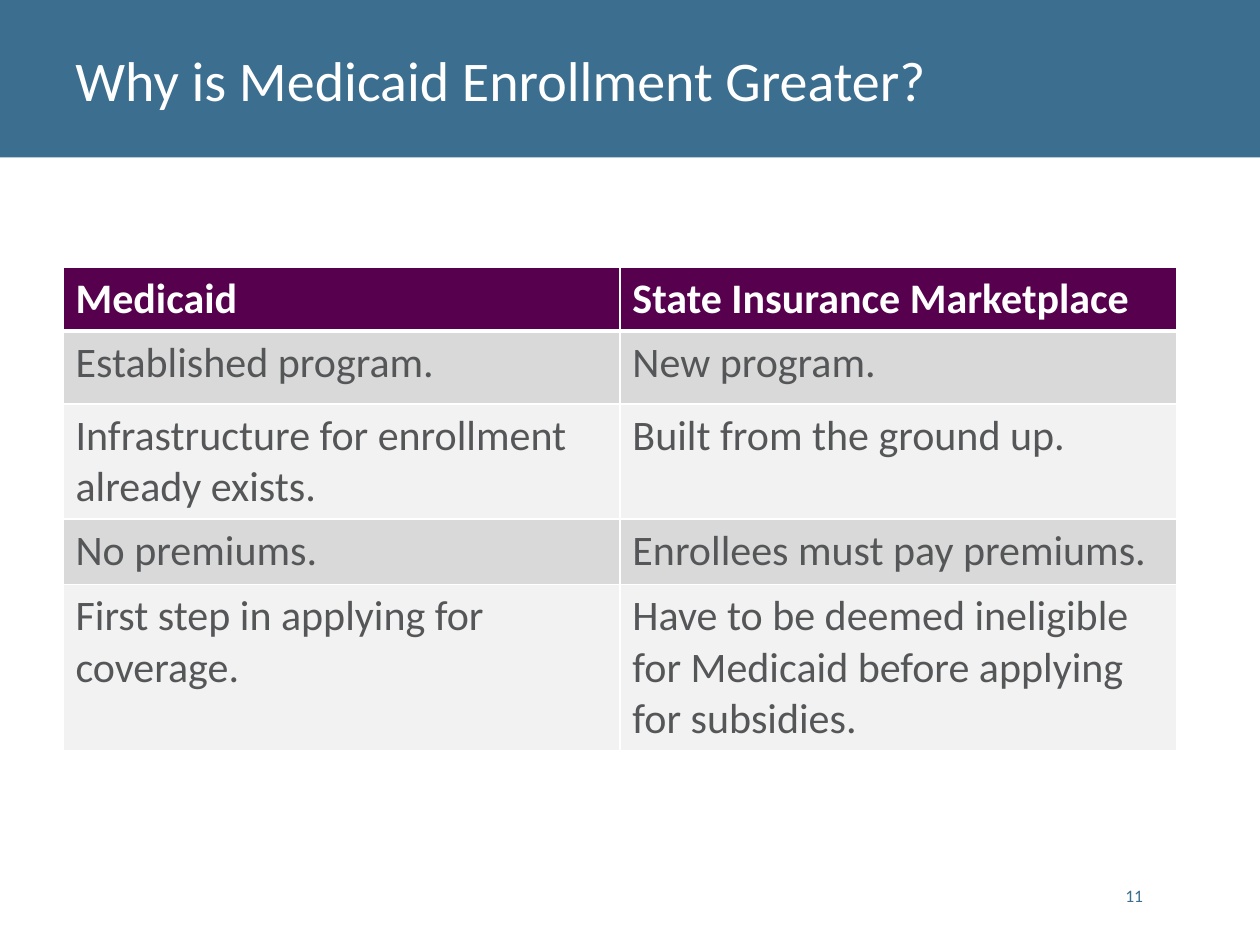
from lxml.etree import SubElement
from pptx import Presentation
from pptx.dml.color import RGBColor
from pptx.enum.shapes import MSO_SHAPE
from pptx.enum.text import MSO_ANCHOR, PP_ALIGN
from pptx.oxml.ns import qn
from pptx.util import Inches, Pt

BLUE, PLUM, GREY, WHITE = "3B6E8F", "56004E", "555658", "FFFFFF"
BANDS = ["D9D9D9", "F2F2F2"]
TITLE = "Why is Medicaid Enrollment Greater?"
PAGE = "11"
ROWS = [
    (0.5, "Medicaid", "State Insurance Marketplace"),
    (0.58, "Established program.", "New program."),
    (0.86, "Infrastructure for enrollment already exists.",
     "Built from the ground up."),
    (0.52, "No premiums.", "Enrollees must pay premiums."),
    (0.86, "First step in applying for coverage.",
     "Have to be deemed ineligible for Medicaid before applying for subsidies."),
]
COL = 4.42
HEAD = {"size": Pt(24), "bold": True}
BODY = {"size": Pt(24), "bold": False}


def rgb(text):
    return RGBColor.from_string(text)


def write(frame, text, color, style):
    para = frame.paragraphs[0]
    run = para.add_run()
    run.text = text
    run.font.name = "Calibri"
    run.font.color.rgb = rgb(color)
    for key, value in style.items():
        setattr(run.font, key, value)
    return para


def add_text(slide, spot, text, color, size, anchor, align):
    frame = slide.shapes.add_textbox(*map(Inches, spot)).text_frame
    frame.word_wrap = True
    frame.vertical_anchor = anchor
    write(frame, text, color, {"size": Pt(size)}).alignment = align


def edge(cell, widths):
    """Draw white cell borders; call before the fill is set."""
    props = cell._tc.get_or_add_tcPr()
    for side, width in widths.items():
        line = SubElement(props, qn("a:ln" + side), w=str(Pt(width)))
        fill = SubElement(line, qn("a:solidFill"))
        SubElement(fill, qn("a:srgbClr"), val=WHITE)


def add_grid(slide):
    high = sum(row[0] for row in ROWS)
    spot = map(Inches, (0.5, 2.12, 2 * COL, high))
    table = slide.shapes.add_table(len(ROWS), 2, *spot).table
    for col in table.columns:
        col.width = Inches(COL)
    for i, (height, *texts) in enumerate(ROWS):
        table.rows[i].height = Inches(height)
        top = i == 0
        back = PLUM if top else BANDS[(i - 1) % 2]
        for j, text in enumerate(texts):
            cell = table.cell(i, j)
            edge(cell, {"L": 1, "R": 1, "T": 3 if i == 1 else 1,
                        "B": 3 if top else 1})
            cell.fill.solid()
            cell.fill.fore_color.rgb = rgb(back)
            write(cell.text_frame, text, WHITE if top else GREY,
                  HEAD if top else BODY)


def main():
    deck = Presentation()
    deck.slide_width, deck.slide_height = Inches(10), Inches(7.5)
    slide = deck.slides.add_slide(deck.slide_layouts[6])
    band = slide.shapes.add_shape(
        MSO_SHAPE.RECTANGLE, 0, 0, Inches(10), Inches(1.25))
    band.shadow.inherit = False
    band.fill.solid()
    band.fill.fore_color.rgb = rgb(BLUE)
    band.line.fill.background()
    add_grid(slide)
    add_text(slide, (0.5, 0, 9, 1.25), TITLE, WHITE, 32,
             MSO_ANCHOR.MIDDLE, PP_ALIGN.LEFT)
    add_text(slide, (8.77, 6.84, 0.4, 0.4), PAGE, BLUE, 10,
             MSO_ANCHOR.BOTTOM, PP_ALIGN.RIGHT)
    deck.save("out.pptx")


if __name__ == "__main__":
    main()
